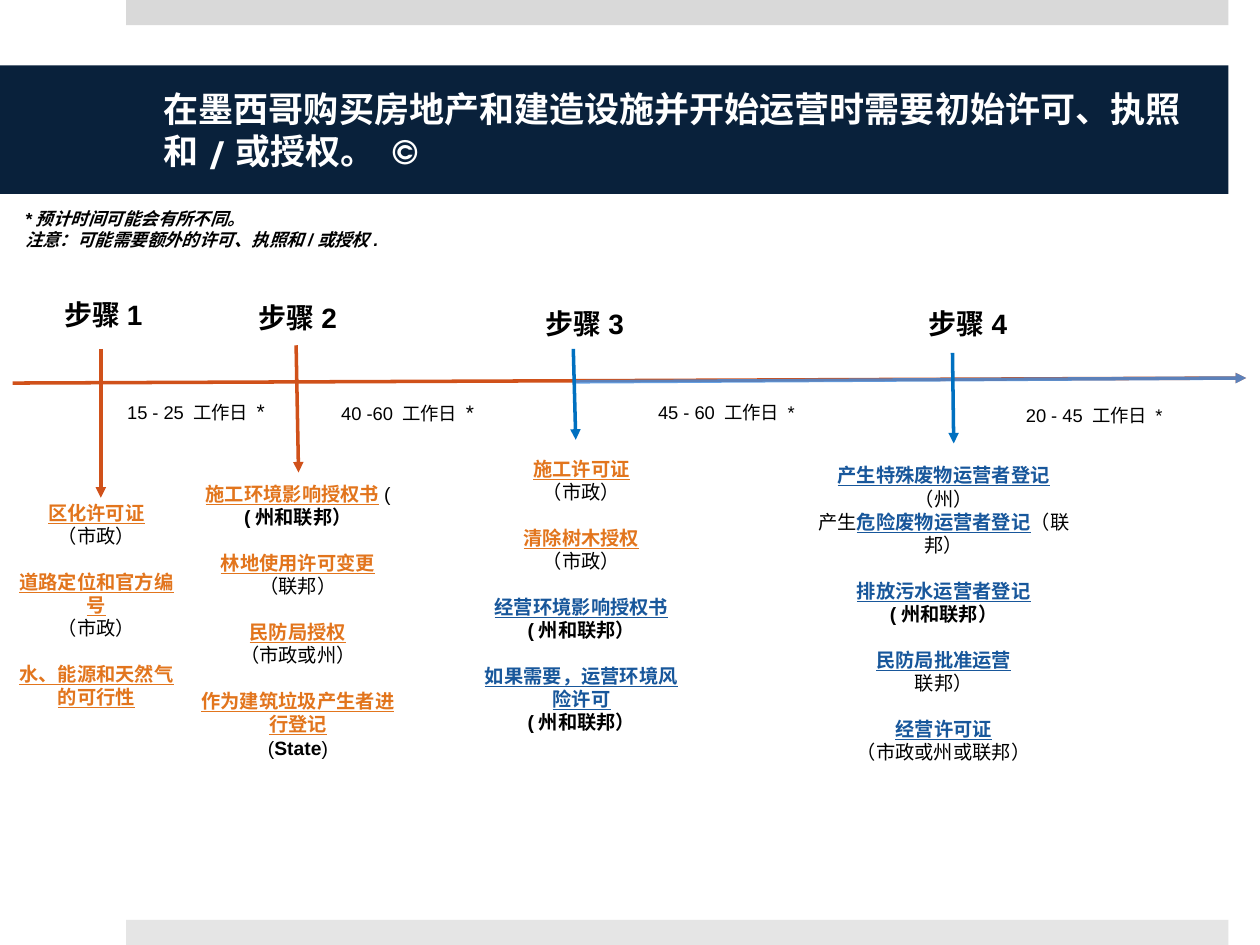
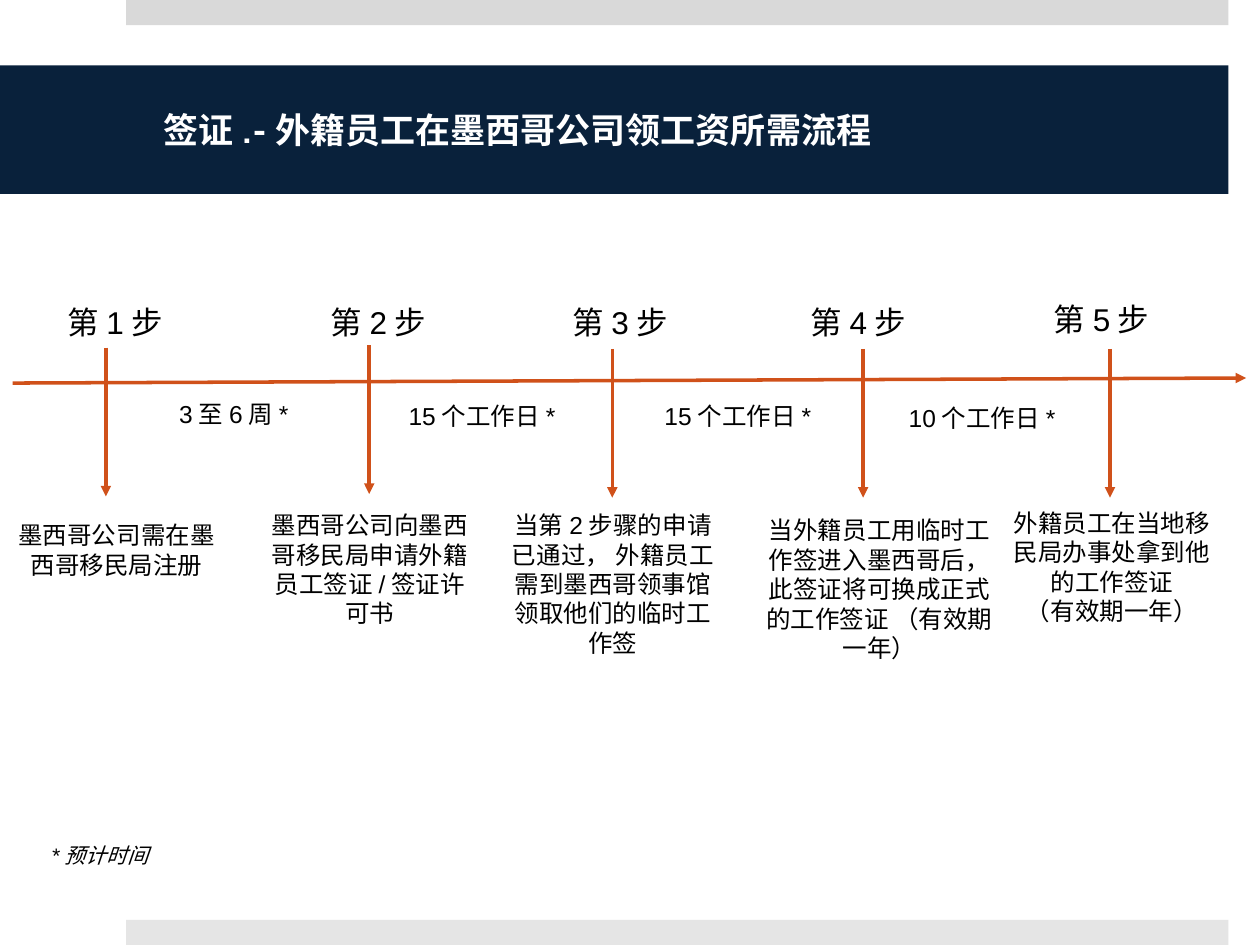
from dataclasses import dataclass

from lxml import etree
from pptx import Presentation
from pptx.dml.color import RGBColor
from pptx.enum import lang, shapes, text
from pptx.oxml import ns
from pptx.util import Pt


@dataclass(frozen=True)
class Theme:
    navy: str = "09213B"
    white: str = "FFFFFF"
    black: str = "000000"
    top_band: str = "D9D9D9"
    bottom_band: str = "E5E5E5"
    rust: str = "D0511A"
    sky: str = "3F8DE2"
    arrow_blue: str = "0070C0"
    orange: str = "E2751D"
    blue: str = "18579B"
    title_font: str = "TeX Gyre Adventor"
    body_font: str = "Arial"
    title_size: float = 20
    step_size: float = 16
    visa_step_size: float = 18
    permit_size: float = 11
    permit_gap: float = 13
    days_size: float = 10.5
    star_size: float = 12
    visa_size: float = 14
    note_size: float = 10
    visa_note_size: float = 12
    line_width: float = 2


THEME = Theme()
ALIGN = text.PP_ALIGN
COLUMN_WIDTH = 133.2


def plain(words, **changes):
    return words, changes


def strong(words):
    return plain(words, bold=True)


def orange(words):
    return plain(words, bold=True, underline=True, color=THEME.orange)


def blue(words):
    return plain(words, bold=True, underline=True, color=THEME.blue)


def format_span(span, size, color=THEME.black, font=THEME.body_font,
                bold=False, italic=False, underline=False):
    span.font.name = font
    span.font.size = Pt(size)
    span.font.bold = bold
    span.font.italic = italic
    span.font.underline = underline
    span.font.color.rgb = RGBColor.from_string(color)
    span.font.language_id = lang.MSO_LANGUAGE_ID.SIMPLIFIED_CHINESE


def write_text(frame, groups, align=ALIGN.CENTER, gap=0, **style):
    """Write groups of paragraphs, with a gap between groups; a paragraph is a list of spans."""
    para = None
    for group in groups:
        for index, spans in enumerate(group):
            first = para is None
            para = frame.paragraphs[0] if first else frame.add_paragraph()
            para.alignment = align
            if gap and index == 0 and not first:
                para.space_before = Pt(gap)
            for words, changes in spans:
                span = para.add_run()
                span.text = words
                format_span(span, **{**style, **changes})


def add_text(page, place, content, **style):
    """Add a text box; content is one string or groups of paragraphs."""
    box = page.shapes.add_textbox(*map(Pt, place))
    box.text_frame.word_wrap = True
    box.text_frame.auto_size = text.MSO_AUTO_SIZE.SHAPE_TO_FIT_TEXT
    groups = [[[plain(content)]]] if isinstance(content, str) else content
    write_text(box.text_frame, groups, **style)


def add_arrow(page, start, end, color=THEME.rust, opacity=100):
    arrow = page.shapes.add_connector(
        shapes.MSO_CONNECTOR.STRAIGHT, *map(Pt, (*start, *end)))
    arrow.line.width = Pt(THEME.line_width)
    arrow.line.color.rgb = RGBColor.from_string(color)
    properties = arrow.element.spPr
    line = properties.find(ns.qn("a:ln"))
    if opacity < 100:
        fill = line.find(".//" + ns.qn("a:srgbClr"))
        etree.SubElement(fill, ns.qn("a:alpha"), val=str(opacity * 1000))
    etree.SubElement(line, ns.qn("a:tailEnd"), type="triangle")
    etree.SubElement(properties, ns.qn("a:effectLst"))


def add_layout_bands(page):
    """Draw the grey edge bands and move them into the shared layout."""
    for top, color in ((0, THEME.top_band), (525.6, THEME.bottom_band)):
        band = page.shapes.add_shape(
            shapes.MSO_SHAPE.RECTANGLE, Pt(72), Pt(top), Pt(630), Pt(14.4))
        band.shadow.inherit = False
        band.fill.solid()
        band.fill.fore_color.rgb = RGBColor.from_string(color)
        band.line.fill.background()
        page.slide_layout.shapes.element.append(band.element)


def add_title(page, words):
    title = page.shapes.title
    title.left, title.top, title.width, title.height = map(Pt, (0, 37.4, 702, 73.4))
    title.fill.solid()
    title.fill.fore_color.rgb = RGBColor.from_string(THEME.navy)
    frame = title.text_frame
    frame.word_wrap = True
    frame.auto_size = text.MSO_AUTO_SIZE.NONE
    frame.vertical_anchor = text.MSO_ANCHOR.MIDDLE
    frame.margin_left, frame.margin_right = Pt(93.6), Pt(21.6)
    frame.margin_top = frame.margin_bottom = Pt(3.6)
    write_text(frame, [[[plain(words)]]], align=ALIGN.LEFT, size=THEME.title_size,
               font=THEME.title_font, color=THEME.white, bold=True)


def add_timeline_page(deck, title):
    page = deck.slides.add_slide(deck.slide_layouts[5])
    add_title(page, title)
    add_arrow(page, (7.2, 218.9), (712.1, 216))
    return page


def build_permits(deck):
    page = add_timeline_page(
        deck, "在墨西哥购买房地产和建造设施并开始运营时需要初始许可、执照和/或授权。 ©")
    add_arrow(page, (329, 218.2), (712.1, 216), THEME.sky, opacity=80)
    city = [plain("（市政）")]
    state_and_federal = [strong("(州和联邦）")]
    # step label place, arrow start, arrow end, arrow colour, permits place, permits
    steps = [
        ((23, 166.3, 65.5, 26.6), (57.6, 199.4), (57.6, 284.4), THEME.rust,
         (-0.7, 283, 111.6, 127.4), [
            [[orange("区化许可证")], city],
            [[orange("道路定位和官方编号")], city],
            [[orange("水、能源和天然气的可行性")]]]),
        ((121.7, 168.5, 77.8, 26.6), (169.2, 197.3), (170.6, 270), THEME.rust,
         (103.7, 272.2, COLUMN_WIDTH, 180.7), [
            [[orange("施工环境影响授权书"), plain("(")], state_and_federal],
            [[orange("林地使用许可变更")], [plain("（联邦）")]],
            [[orange("民防局授权")], [plain("（市政或州）")]],
            [[orange("作为建筑垃圾产生者进行登记")],
             [plain("("), strong("State"), plain(")")]]]),
        ((300.2, 171.4, 63.4, 26.6), (327.6, 199.4), (329, 251.3), THEME.arrow_blue,
         (265.7, 257.8, COLUMN_WIDTH, 220.3), [
            [[orange("施工许可证")], city],
            [[orange("清除树木授权")], city],
            [[blue("经营环境影响授权书")], state_and_federal],
            [[blue("如果需要，运营环境风险许可")], state_and_federal]]),
        ((504.7, 171.4, 77.8, 26.6), (544.3, 201.6), (545, 253.4), THEME.arrow_blue,
         (452.2, 261.4, 174.2, 193.7), [
            [[blue("产生特殊废物运营者登记")], [plain("（州）")],
             [plain("产生"), blue("危险废物运营者登记"), plain("（联邦）")]],
            [[blue("排放污水运营者登记")], state_and_federal],
            [[blue("民防局批准运营")], [plain("联邦）")]],
            [[blue("经营许可证")], [plain("（市政或州或联邦）")]]]),
    ]
    for number, (label, start, end, color, place, permits) in enumerate(steps, 1):
        add_text(page, label, f"步骤{number}", align=ALIGN.RIGHT,
                 size=THEME.step_size, bold=True)
        add_arrow(page, start, end, color)
        add_text(page, place, permits, size=THEME.permit_size, gap=THEME.permit_gap)

    durations = [
        (45.4, 223.9, COLUMN_WIDTH, "15 - 25 工作日 ", THEME.star_size),
        (166.3, 224.6, COLUMN_WIDTH, "40 -60 工作日 ", THEME.star_size),
        (348.5, 225.4, COLUMN_WIDTH, "45 - 60 工作日 ", THEME.days_size),
        (572.4, 227.5, 105.8, "20 - 45 工作日 ", THEME.days_size),
    ]
    for left, top, width, days, star_size in durations:
        add_text(page, (left, top, width, 21),
                 [[[plain(days), plain("*", size=star_size)]]], size=THEME.days_size)
    add_text(page, (7.2, 115.2, 547.9, 31.7),
             [[[plain("*预计时间可能会有所不同。")],
               [plain("注意：可能需要额外的许可、执照和/或授权.")]]],
             align=ALIGN.JUSTIFY, size=THEME.note_size, bold=True, italic=True)
    return page


def build_visas(deck):
    page = add_timeline_page(deck, "签证.-外籍员工在墨西哥公司领工资所需流程")
    # label left, label top, arrow x, arrow top, text place, paragraphs
    steps = [
        (21.6, 169.9, 60.5, 198.7, (0, 293.8, COLUMN_WIDTH, 41),
         ["墨西哥公司需在墨西哥移民局注册"]),
        (172.1, 169.9, 211, 197.3, (144.7, 288, COLUMN_WIDTH, 74.9),
         ["墨西哥公司向墨西哥移民局申请外籍员工签证/签证许可书"]),
        (310.3, 169.9, 349.9, 199.4, (283.7, 288, COLUMN_WIDTH, 92.2),
         ["当第2步骤的申请已通过， 外籍员工需到墨西哥领事馆领取他们的临时工作签"]),
        (446.4, 169.9, 493.2, 199.4, (428.4, 290.9, 148.3, 92.2),
         ["当外籍员工用临时工作签进入墨西哥后， 此签证将可换成正式的工作签证 （有效期一年）"]),
        (585.4, 167.8, 634.3, 199.4, (568.8, 286.6, COLUMN_WIDTH, 74.9),
         ["外籍员工在当地移民局办事处拿到他的工作签证", "（有效期一年）"]),
    ]
    for number, (left, top, x, arrow_top, place, lines) in enumerate(steps, 1):
        add_text(page, (left, top, 78.5, 28.8), f"第{number}步",
                 align=ALIGN.RIGHT, size=THEME.visa_step_size)
        add_arrow(page, (x, arrow_top), (x, arrow_top + 85))
        add_text(page, place, [[[plain(line)] for line in lines]], size=THEME.visa_size)

    durations = [(67, 224.6, "3至6周*"), (208.8, 225.4, "15个工作日*"),
                 (355, 225.4, "15个工作日*"), (494.6, 226.8, "10个工作日*")]
    for left, top, duration in durations:
        add_text(page, (left, top, COLUMN_WIDTH, 24.5), duration, size=THEME.visa_size)
    add_text(page, (22.3, 478.1, 547.9, 21.6), "*预计时间", align=ALIGN.LEFT,
             size=THEME.visa_note_size, italic=True)


def main():
    deck = Presentation()
    deck.slide_width, deck.slide_height = Pt(720), Pt(540)
    add_layout_bands(build_permits(deck))
    build_visas(deck)
    deck.save("out.pptx")


if __name__ == "__main__":
    main()
